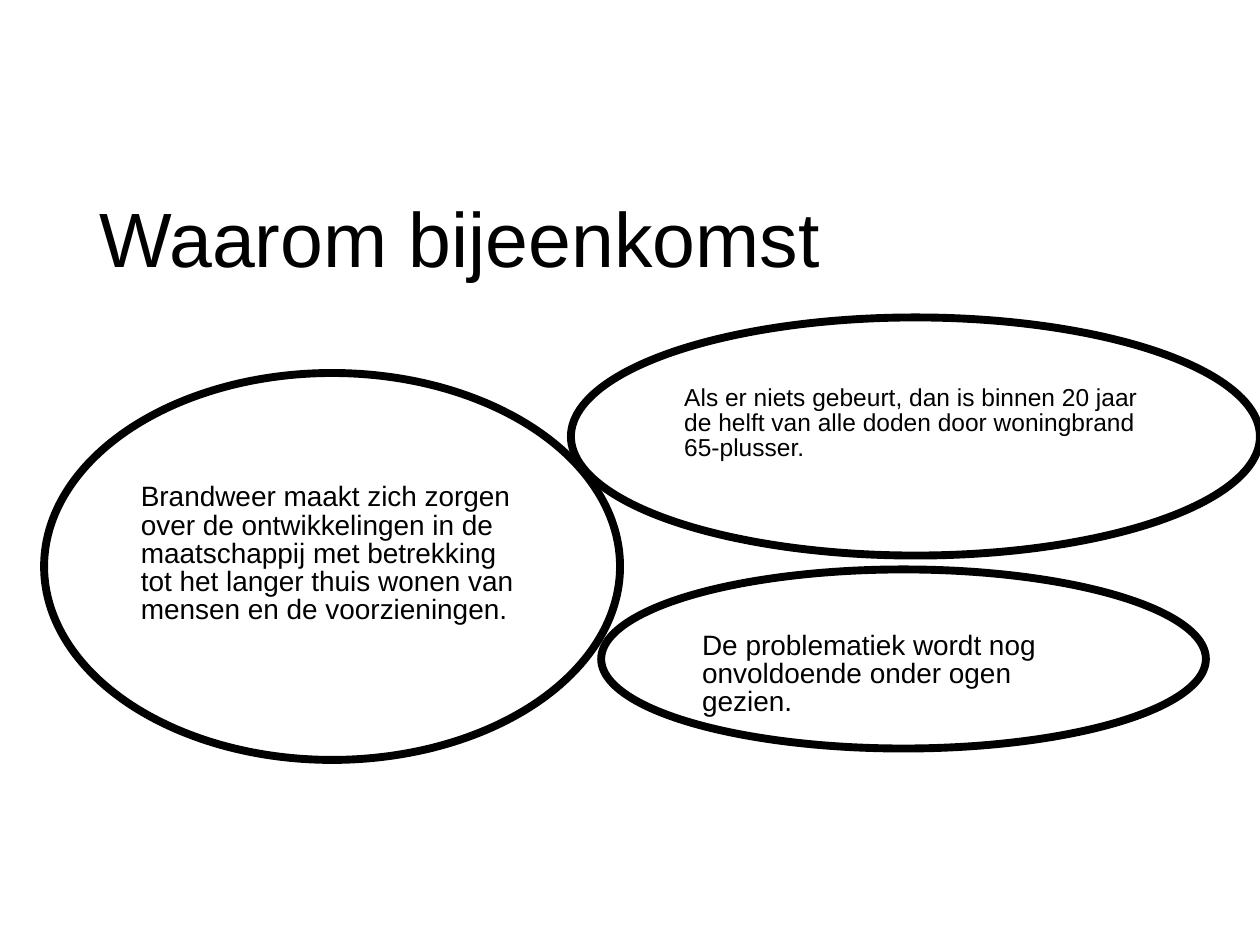
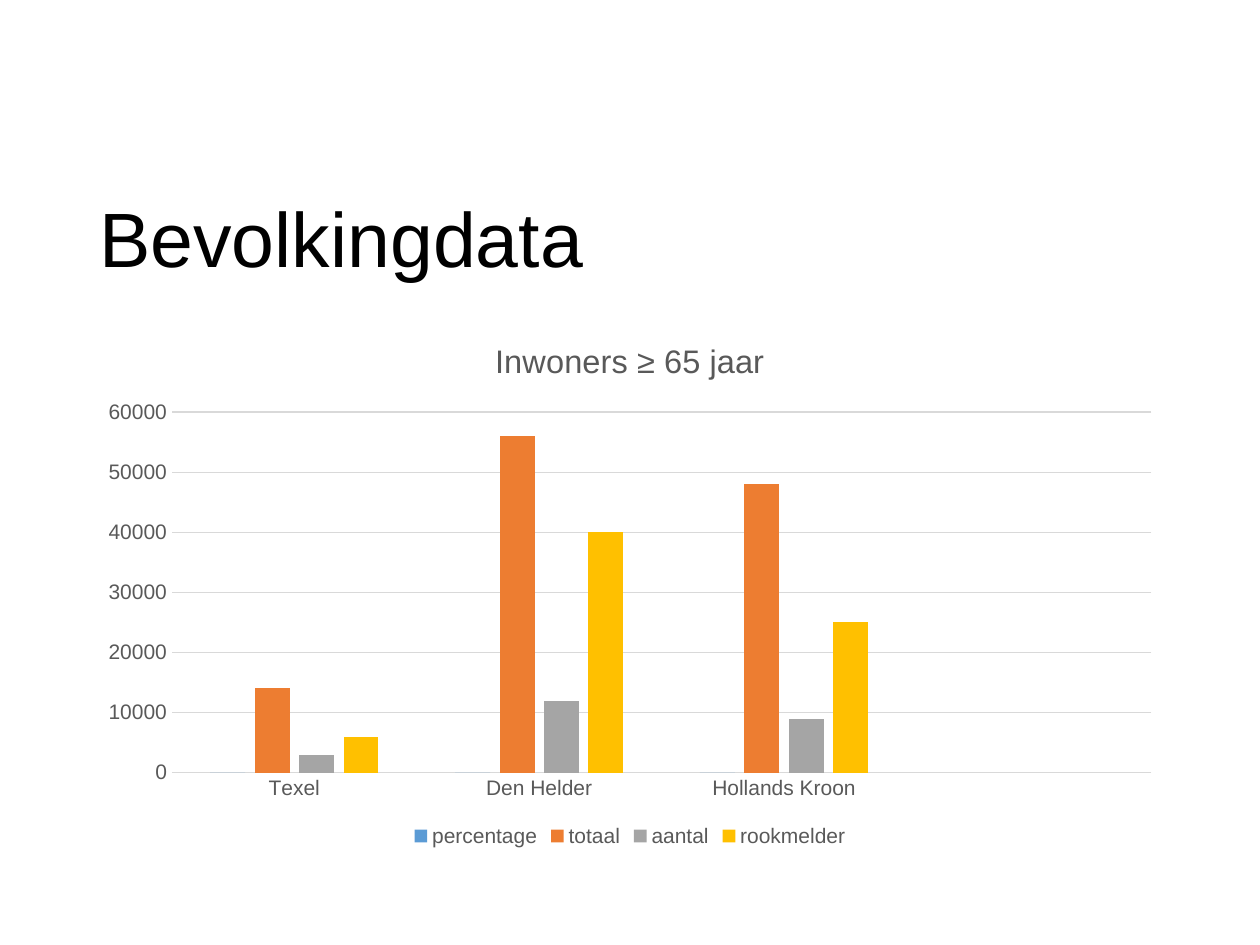
"""Build two slides: reasons for the meeting and population data."""
import dataclasses

import pptx
import pptx.chart.data
import pptx.dml.color
import pptx.enum.chart
import pptx.enum.shapes
import pptx.enum.text
import pptx.util

Cm = pptx.util.Cm
Pt = pptx.util.Pt

FONT = "Arial"
COLOURS = {
    "ink": "000000",
    "label": "595959",
    "grid": "D9D9D9",
    "blue": "5B9BD5",
    "orange": "ED7D31",
    "grey": "A5A5A5",
    "yellow": "FFC000",
}


@dataclasses.dataclass(frozen=True)
class Bubble:
    text: str
    left: float
    top: float
    width: float
    height: float
    inset_top: float
    size: float


@dataclasses.dataclass(frozen=True)
class Series:
    name: str
    values: tuple[int | None, ...]
    colour: str


BUBBLES = (
    Bubble("Brandweer maakt zich zorgen over de ontwikkelingen in de maatschappij "
           "met betrekking tot het langer thuis wonen van mensen en de voorzieningen.",
           0.89, 7.52, 11.61, 7.8, 1.1, 16),
    Bubble("De problematiek wordt nog onvoldoende onder ogen gezien.",
           12.12, 11.48, 12.19, 3.61, 0.75, 16),
    Bubble("Als er niets gebeurt, dan is binnen 20 jaar de helft van alle doden "
           "door woningbrand 65-plusser.",
           11.51, 6.4, 13.89, 4.8, 0.7, 14),
)
MUNICIPALITIES = ("Texel", "Den Helder", "Hollands Kroon", "")
POPULATION = (
    Series("percentage", (0, 0, 0, None), "blue"),
    Series("totaal", (14000, 56000, 48000, None), "orange"),
    Series("aantal", (3000, 12000, 9000, None), "grey"),
    Series("rookmelder", (6000, 40000, 25000, None), "yellow"),
)


def colour(name: str) -> pptx.dml.color.RGBColor:
    """Return the named colour of the palette."""
    return pptx.dml.color.RGBColor.from_string(COLOURS[name])


def format_font(font: pptx.text.text.Font, size: float, name: str) -> None:
    """Set typeface, size and colour of a font."""
    font.name = FONT
    font.size = Pt(size)
    font.bold = False
    font.color.rgb = colour(name)


def format_line(line: pptx.dml.line.LineFormat, name: str, width: float) -> None:
    """Set colour and width of a line."""
    line.color.rgb = colour(name)
    line.width = Pt(width)


def format_paragraph(paragraph: pptx.text.text._Paragraph, size: float, spacing: float) -> None:
    """Left-align a paragraph and format its runs."""
    paragraph.alignment = pptx.enum.text.PP_ALIGN.LEFT
    paragraph.line_spacing = spacing
    for run in paragraph.runs:
        format_font(run.font, size, "ink")


def add_titled_slide(presentation: pptx.presentation.Presentation, text: str) -> pptx.slide.Slide:
    """Add a title-only slide with the shared title style."""
    slide = presentation.slides.add_slide(presentation.slide_layouts[5])
    title = slide.shapes.title
    title.left, title.top = Cm(1.75), Cm(3.89)
    title.width, title.height = Cm(21.9), Cm(1.98)
    text_frame = title.text_frame
    text_frame.text = text
    text_frame.auto_size = pptx.enum.text.MSO_AUTO_SIZE.NONE
    text_frame.vertical_anchor = pptx.enum.text.MSO_ANCHOR.MIDDLE
    format_paragraph(text_frame.paragraphs[0], 44, 0.9)
    return slide


def add_bubble(slide: pptx.slide.Slide, bubble: Bubble) -> None:
    """Draw an outlined ellipse with its text."""
    shape = slide.shapes.add_shape(
        pptx.enum.shapes.MSO_SHAPE.OVAL,
        Cm(bubble.left), Cm(bubble.top), Cm(bubble.width), Cm(bubble.height))
    shape.shadow.inherit = False
    shape.fill.background()
    format_line(shape.line, "ink", 4.5)
    text_frame = shape.text_frame
    text_frame.text = bubble.text
    text_frame.word_wrap = True
    text_frame.vertical_anchor = pptx.enum.text.MSO_ANCHOR.TOP
    text_frame.margin_top = Cm(bubble.inset_top)
    format_paragraph(text_frame.paragraphs[0], bubble.size, 0.84)


def add_population_chart(slide: pptx.slide.Slide) -> None:
    """Draw the clustered columns of the population data."""
    data = pptx.chart.data.CategoryChartData()
    data.categories = MUNICIPALITIES
    for series in POPULATION:
        data.add_series(series.name, series.values)
    chart = slide.shapes.add_chart(
        pptx.enum.chart.XL_CHART_TYPE.COLUMN_CLUSTERED,
        Cm(1.75), Cm(6.38), Cm(21.9), Cm(10.8), data).chart
    format_font(chart.font, 10, "ink")

    chart.has_title = True
    title_frame = chart.chart_title.text_frame
    title_frame.text = "Inwoners ≥ 65 jaar"
    format_font(title_frame.paragraphs[0].runs[0].font, 18.6, "label")
    chart.chart_title.include_in_layout = False

    chart.has_legend = True
    chart.legend.position = pptx.enum.chart.XL_LEGEND_POSITION.BOTTOM
    chart.legend.include_in_layout = False
    format_font(chart.legend.font, 12, "label")

    for axis in (chart.category_axis, chart.value_axis):
        axis.major_tick_mark = pptx.enum.chart.XL_TICK_MARK.NONE
        axis.minor_tick_mark = pptx.enum.chart.XL_TICK_MARK.NONE
        format_font(axis.tick_labels.font, 12, "label")
    format_line(chart.category_axis.format.line, "grid", 0.75)
    chart.value_axis.format.line.fill.background()
    format_line(chart.value_axis.major_gridlines.format.line, "grid", 0.75)
    chart.value_axis.minimum_scale = 0
    chart.value_axis.maximum_scale = 60000
    chart.value_axis.major_unit = 10000

    plot = chart.plots[0]
    plot.gap_width = 219
    plot.overlap = -27
    plot.vary_by_categories = False
    for column, series in zip(plot.series, POPULATION):
        column.format.fill.solid()
        column.format.fill.fore_color.rgb = colour(series.colour)


def main() -> None:
    """Build and save the presentation."""
    presentation = pptx.Presentation()
    presentation.slide_width, presentation.slide_height = Cm(25.4), Cm(19.05)
    reasons = add_titled_slide(presentation, "Waarom bijeenkomst")
    for bubble in BUBBLES:
        add_bubble(reasons, bubble)
    add_population_chart(add_titled_slide(presentation, "Bevolkingdata"))
    presentation.save("out.pptx")


if __name__ == "__main__":
    main()
